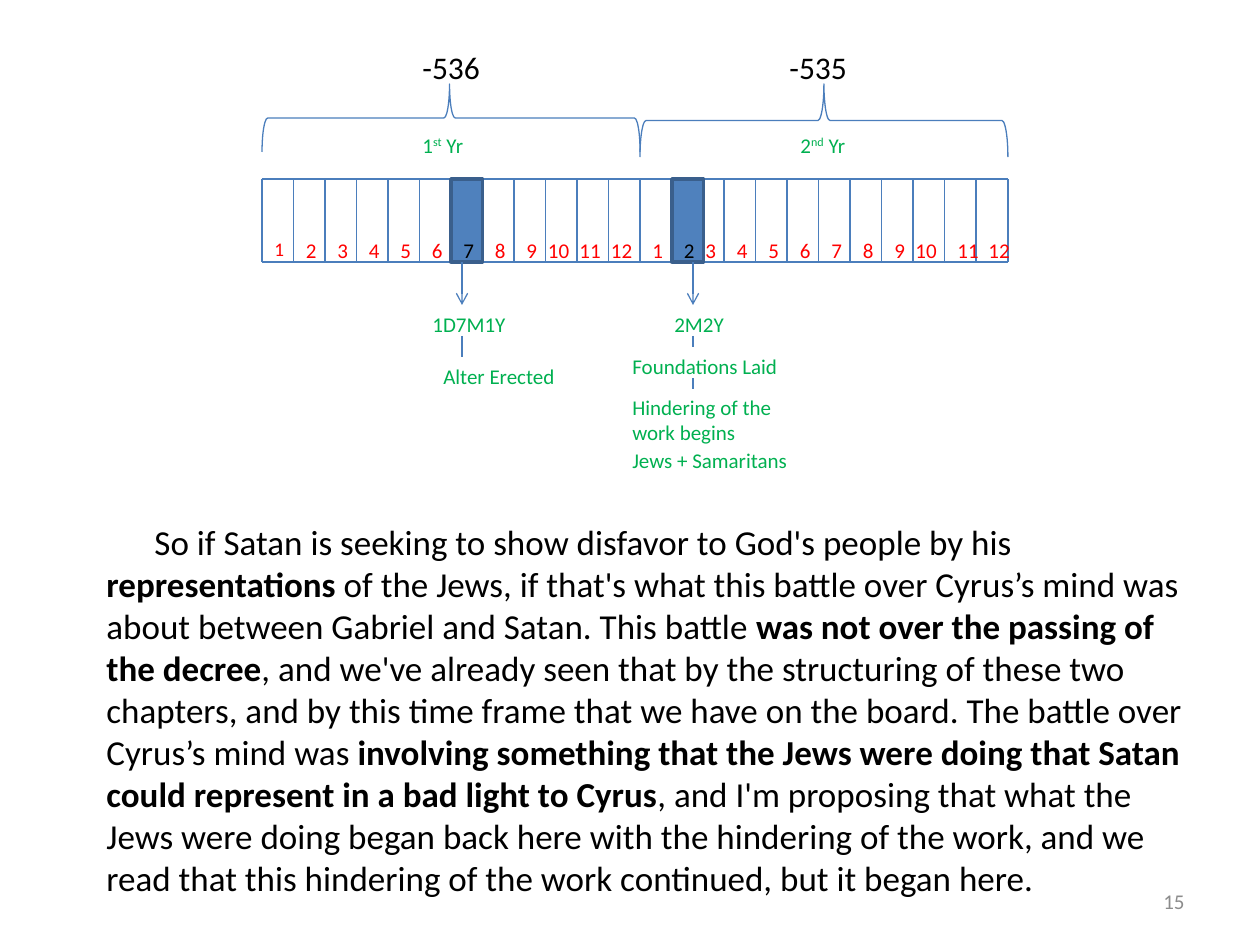
from lxml.etree import SubElement
from pptx import Presentation
from pptx.dml.color import RGBColor
from pptx.enum.shapes import MSO_CONNECTOR, MSO_SHAPE
from pptx.enum.text import MSO_ANCHOR, PP_ALIGN
from pptx.oxml.ns import qn
from pptx.util import Pt

EMU_PER_PX = 914400 / 126
BLUE, DARK_BLUE, FILL = "4B7EBC", "3A5F8C", "4F81BD"
GREEN, RED, BLACK, GREY = "00B050", "FF0000", "000000", "8C8C8C"

STRIP_LEFT, STRIP_RIGHT, STRIP_TOP, STRIP_BOTTOM = 262, 1008, 179, 262
YEAR_TWO, MONTH_WIDTH, LABEL_TOP = 640, 31.5, 231
SECOND_MONTHS = 724

HIGHLIGHTS = [451, 672]
BRACES = [
    (MSO_SHAPE.LEFT_BRACE, 90, STRIP_LEFT, YEAR_TWO, 84, 152, (0.083, 0.504)),
    (MSO_SHAPE.RIGHT_BRACE, 270, YEAR_TWO, STRIP_RIGHT, 84, 157, (0.083, 0.5)),
]
YEARS = [("-536", 410), ("-535", 777)]
ORDINALS = [("1", "st", 410), ("2", "nd", 788)]
ARROWS = [(462, 262, 305), (693, 262, 305)]
LINKS = [(462, 336, 357), (693, 336, 347), (693, 378, 389)]
EVENTS = [
    ("1D7M1Y", 420, 305, 230),
    ("Alter Erected", 431, 357, 136),
    ("2M2Y", 662, 305, 242),
    ("Foundations Laid", 620, 347, 210),
    ("Hindering of the work begins", 620, 388, 179),
    ("Jews + Samaritans", 620, 441, 441),
]
PASSAGE = [
    ("So if Satan is seeking to show disfavor to God's people by his ", False),
    ("representations", True),
    (" of the Jews, if that's what this battle over Cyrus’s mind was about between "
     "Gabriel and Satan. This battle ", False),
    ("was not over the passing of the decree", True),
    (", and we've already seen that by the structuring of these two chapters, and by "
     "this time frame that we have on the board. The battle over Cyrus’s mind was ", False),
    ("involving something that the Jews were doing that Satan could represent in a bad "
     "light to Cyrus", True),
    (", and I'm proposing that what the Jews were doing began back here with the "
     "hindering of the work, and we read that this hindering of the work continued, "
     "but it began here.", False),
]

presentation = Presentation()
presentation.slide_width = round(1260 * EMU_PER_PX)
presentation.slide_height = round(945 * EMU_PER_PX)
slide = presentation.slides.add_slide(presentation.slide_layouts[6])


def px(*lengths):
    return [round(length * EMU_PER_PX) for length in lengths]


def color(value):
    return RGBColor.from_string(value)


def add_line(x1, y1, x2, y2, arrow=False):
    line = slide.shapes.add_connector(MSO_CONNECTOR.STRAIGHT, *px(x1, y1, x2, y2))
    line.line.color.rgb = color(BLUE)
    line.line.width = Pt(0.75)
    if arrow:
        SubElement(line.line._get_or_add_ln(), qn("a:tailEnd"), type="arrow")
    SubElement(line._element.spPr, qn("a:effectLst"))


def add_shape(kind, left, top, width, height, line_color, line_width):
    shape = slide.shapes.add_shape(kind, *px(left, top, width, height))
    shape.shadow.inherit = False
    shape.line.color.rgb = color(line_color)
    shape.line.width = Pt(line_width)
    return shape


def add_text(text, left, top, width, height, size, text_color):
    box = slide.shapes.add_textbox(*px(left, top, width, height))
    box.text_frame.word_wrap = True
    paragraph = box.text_frame.paragraphs[0]
    paragraph.font.size = Pt(size)
    paragraph.font.name = "Calibri"
    paragraph.font.color.rgb = color(text_color)
    if text:
        paragraph.add_run().text = text
    return box.text_frame


for y in (STRIP_TOP, STRIP_BOTTOM):
    add_line(STRIP_LEFT, y, STRIP_RIGHT, y)
dividers = [STRIP_LEFT + MONTH_WIDTH * month for month in range(15)]
dividers += [SECOND_MONTHS + MONTH_WIDTH * month for month in range(9)] + [STRIP_RIGHT]
for x in dividers:
    add_line(x, STRIP_BOTTOM, x, STRIP_TOP)

for x in HIGHLIGHTS:
    highlight = add_shape(MSO_SHAPE.RECTANGLE, x, STRIP_TOP, MONTH_WIDTH,
                          STRIP_BOTTOM - STRIP_TOP, DARK_BLUE, 2)
    highlight.fill.solid()
    highlight.fill.fore_color.rgb = color(FILL)

for kind, rotation, left, right, top, bottom, adjustments in BRACES:
    width, height = bottom - top, right - left
    brace = add_shape(kind, (left + right - width) / 2, (top + bottom - height) / 2,
                      width, height, BLUE, 0.75)
    brace.rotation = rotation
    brace.fill.background()
    for index, value in enumerate(adjustments):
        brace.adjustments[index] = value

for text, left in YEARS:
    add_text(text, left, 42, 105, 50, 18, BLACK)

for number, suffix, left in ORDINALS:
    paragraph = add_text(number, left, 126, 210, 38, 12, GREEN).paragraphs[0]
    raised = paragraph.add_run()
    raised.text = suffix
    raised._r.get_or_add_rPr().set("baseline", "30000")
    paragraph.add_run().text = " Yr"

first_lefts = [STRIP_LEFT + MONTH_WIDTH * month - (10 if month > 8 else 0)
               for month in range(12)]
second_lefts = [YEAR_TWO, YEAR_TWO + MONTH_WIDTH]
second_lefts += [693 + MONTH_WIDTH * month for month in range(7)] + [903, 945, 976]
for lefts, marked in ((first_lefts, 7), (second_lefts, 2)):
    for month, left in enumerate(lefts, 1):
        add_text(str(month), left, LABEL_TOP, 84, 38,
                 11 if left == STRIP_LEFT else 12, BLACK if month == marked else RED)

for x, top, bottom in ARROWS:
    add_line(x, top, x, bottom, arrow=True)
for x, top, bottom in LINKS:
    add_line(x, top, x, bottom)
for text, left, top, width in EVENTS:
    add_text(text, left, top, width, 38, 12, GREEN)

passage = add_text("", 94, 514, 1103, 394, 20, BLACK).paragraphs[0]
passage._p.get_or_add_pPr().set("indent", str(px(48)[0]))
for text, bold in PASSAGE:
    run = passage.add_run()
    run.text = text
    run.font.bold = bold

page_number = add_text("15", 903, 876, 294, 50, 12, GREY)
page_number.vertical_anchor = MSO_ANCHOR.MIDDLE
page_number.paragraphs[0].alignment = PP_ALIGN.RIGHT

presentation.save("out.pptx")
